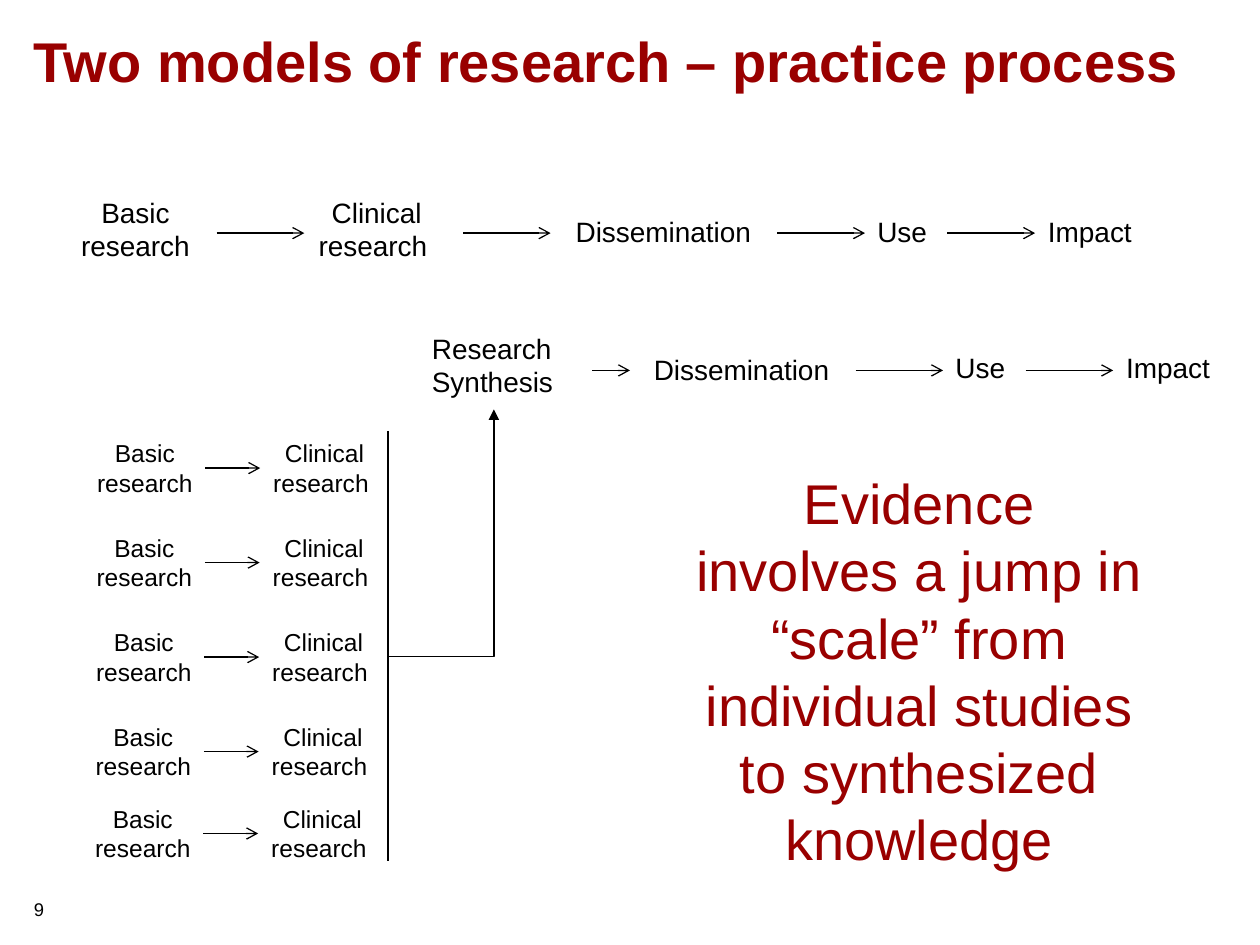
import pptx
import pptx.util
import pptx.dml.color
import pptx.enum.shapes
import pptx.enum.text
import pptx.oxml.ns
import lxml.etree

CRIMSON = pptx.dml.color.RGBColor(0x99, 0x00, 0x00)
BLACK = pptx.dml.color.RGBColor(0x00, 0x00, 0x00)
WHITE = pptx.dml.color.RGBColor(0xFF, 0xFF, 0xFF)
FONT = "Arial"

# The slide is a grid of 100 columns by 75 rows
SLIDE_WIDTH = pptx.util.Inches(10)
SLIDE_HEIGHT = pptx.util.Inches(7.5)
COLUMN = SLIDE_WIDTH / 100
ROW = SLIDE_HEIGHT / 75

LEFT = pptx.enum.text.PP_ALIGN.LEFT
CENTER = pptx.enum.text.PP_ALIGN.CENTER
STRAIGHT = pptx.enum.shapes.MSO_CONNECTOR.STRAIGHT
ELBOW = pptx.enum.shapes.MSO_CONNECTOR.ELBOW

BASIC = "Basic\nresearch"
CLINICAL = "Clinical\nresearch "


def columns(count):
    return round(count * COLUMN)


def rows(count):
    return round(count * ROW)


def add_text(slide, text, left, top, width, height, size,
             color=BLACK, align=CENTER, bold=False, wrap=True):
    box = slide.shapes.add_textbox(columns(left), rows(top),
                                   columns(width), rows(height))
    frame = box.text_frame
    frame.text = text
    frame.word_wrap = wrap
    for paragraph in frame.paragraphs:
        paragraph.alignment = align
        for run in paragraph.runs:
            run.font.name = FONT
            run.font.size = pptx.util.Pt(size)
            run.font.bold = bold
            run.font.color.rgb = color
    return frame


def add_stage(slide, text, left, top, width, height, size=16, align=CENTER):
    frame = add_text(slide, text, left, top, width, height, size,
                     align=align, wrap=False)
    frame.auto_size = pptx.enum.text.MSO_AUTO_SIZE.SHAPE_TO_FIT_TEXT


def add_line(slide, start, end, head=None, kind=STRAIGHT):
    line = slide.shapes.add_connector(kind, columns(start[0]), rows(start[1]),
                                      columns(end[0]), rows(end[1]))
    line.line.color.rgb = BLACK
    line.line.width = pptx.util.Pt(0.75)
    qn = pptx.oxml.ns.qn
    properties = line._element.spPr
    if head:
        lxml.etree.SubElement(properties.find(qn("a:ln")),
                              qn("a:tailEnd"), type=head)
    lxml.etree.SubElement(properties, qn("a:effectLst"))
    if kind == ELBOW:
        # A single right-angle turn
        properties.find(qn("a:prstGeom")).set("prst", "bentConnector2")


def add_arrow(slide, left, middle, length):
    add_line(slide, (left, middle), (left + length, middle), "arrow")


def add_delivery(slide, left, word_top, middle, dissemination_top):
    """Dissemination, use and impact, joined by arrows."""
    add_stage(slide, "Dissemination", left, dissemination_top, 16.1, 3.7)
    add_stage(slide, "Use", left + 24.2 - 0.2, word_top, 6, 3.7)
    add_stage(slide, "Impact", left + 37.5, word_top, 8.8, 3.7)
    for offset in (17.1, 30.6):
        add_arrow(slide, left + offset, middle, 6.95)


def add_linear_model(slide):
    add_stage(slide, BASIC, 5.4, 15, 10.7, 6.4)
    add_stage(slide, CLINICAL, 24.2, 15, 11.4, 6.4)
    for left in (17.2, 36.75):
        add_arrow(slide, left, 18.5, 6.95)
    add_delivery(slide, 44.6, 16.5, 18.5, 16.5)


def add_study(slide, index, top):
    # Each study sits slightly further left than the one above
    left = 6.7 - 0.04 * index
    add_stage(slide, BASIC, left, top, 9.6, 5.7, size=14)
    add_arrow(slide, left + 9.6, top + 2.85, 4.35)
    add_stage(slide, CLINICAL, left + 13.95, top, 10.2, 5.7, size=14)


def add_synthesis_model(slide):
    # Individual studies
    for index, top in enumerate((34.3, 41.8, 49.3, 56.8, 63.3)):
        add_study(slide, index, top)

    # Studies gathered into one synthesis
    add_line(slide, (30.8, 34.2), (30.8, 68.3))
    add_line(slide, (30.8, 52.1), (39.2, 32.5), "triangle", ELBOW)
    add_stage(slide, "Research\nSynthesis", 33.3, 25.8, 12.4, 6.4, align=LEFT)

    # From synthesis to impact
    add_arrow(slide, 47, 29.4, 3)
    add_delivery(slide, 50.8, 27.3, 29.4, 27.5)


def main():
    deck = pptx.Presentation()
    deck.slide_width = SLIDE_WIDTH
    deck.slide_height = SLIDE_HEIGHT
    slide = deck.slides.add_slide(deck.slide_layouts[6])
    slide.background.fill.solid()
    slide.background.fill.fore_color.rgb = WHITE

    # Title and page number
    title = add_text(slide, "Two models of research – practice process",
                     1.7, 0.9, 96.8, 7.7, 32, CRIMSON, LEFT, bold=True)
    title.vertical_anchor = pptx.enum.text.MSO_ANCHOR.MIDDLE
    add_text(slide, "9", 1.7, 70.8, 20.8, 2.7, 10.5, align=LEFT)

    # The two models
    add_linear_model(slide)
    add_synthesis_model(slide)

    # Conclusion
    add_text(slide, "Evidence involves a jump in “scale” from individual "
             "studies to synthesized knowledge",
             54.2, 36.7, 37.5, 33.3, 32, CRIMSON)

    deck.save("out.pptx")


if __name__ == "__main__":
    main()
